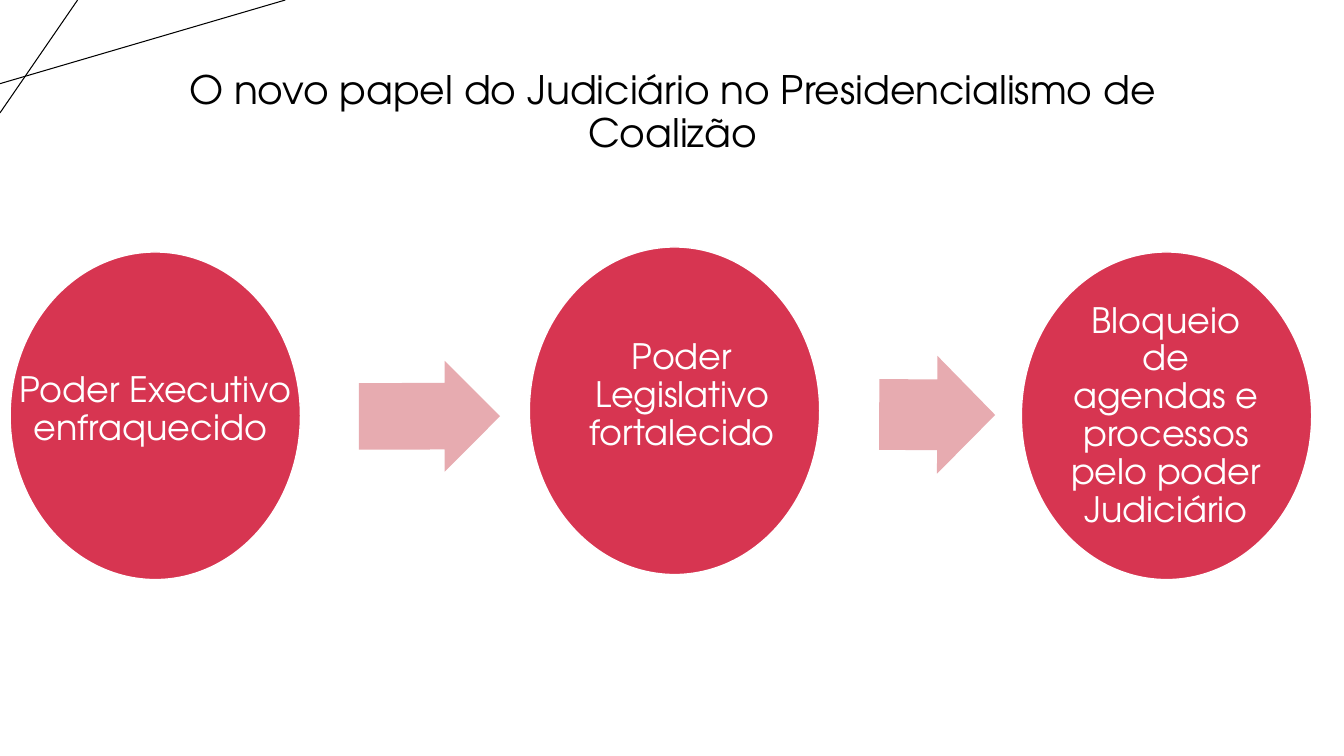
"""Build a slide on the Judiciary's new role: three powers joined by arrows."""
from dataclasses import dataclass

from lxml import etree
from pptx import Presentation
from pptx.dml.color import RGBColor
from pptx.enum.shapes import MSO_CONNECTOR, MSO_SHAPE
from pptx.enum.text import MSO_ANCHOR, MSO_AUTO_SIZE, PP_ALIGN
from pptx.oxml.ns import qn
from pptx.util import Pt

OVAL, ARROW = MSO_SHAPE.OVAL, MSO_SHAPE.RIGHT_ARROW
LINE = MSO_CONNECTOR.STRAIGHT
MID, CENTER, FIXED = MSO_ANCHOR.MIDDLE, PP_ALIGN.CENTER, MSO_AUTO_SIZE.NONE
SCALE = 9144
PAGE = (1333, 750)

TITLE = "O novo papel do Judiciário no Presidencialismo de Coalizão"
TITLE_BOX = (92, 40, 1150, 145)
OVAL_SIZE = (288, 325)
POWERS = [
    ("Poder Executivo enfraquecido ", (10, 250), (10, 296, 288, 222)),
    ("Poder Legislativo fortalecido", (525, 245), (575, 278, 203, 230)),
    ("Bloqueio de agendas e processos pelo poder Judiciário",
     (1013, 250), (1055, 298, 203, 230)),
]
ARROWS = [((356, 358, 140, 110), -0.1), ((872, 353, 115, 117), 0.2)]
RAYS = [(0, 83, 283, 0), (77, 0, 0, 112)]


@dataclass(frozen=True)
class Theme:
    font: str = "TeX Gyre Adventor"
    ink: RGBColor = RGBColor(0x00, 0x00, 0x00)
    paper: RGBColor = RGBColor(0xFF, 0xFF, 0xFF)
    rose: RGBColor = RGBColor(0xD7, 0x35, 0x51)
    blush: RGBColor = RGBColor(0xE7, 0xAB, 0xB0)
    head: int = 28
    body: int = 25


THEME = Theme()


def emu(box):
    return [n * SCALE for n in box]


def write(frame, text, size, color, pads):
    frame.word_wrap = True
    frame.auto_size = FIXED
    frame.vertical_anchor = MID
    frame.margin_left = frame.margin_right = pads[0] * SCALE
    frame.margin_top = frame.margin_bottom = pads[1] * SCALE
    para = frame.paragraphs[0]
    para.alignment = CENTER
    para.line_spacing = 0.9
    para.space_before = Pt(0)
    run = para.add_run()
    run.text = text
    run.font.name = THEME.font
    run.font.size = Pt(size)
    run.font.color.rgb = color


def add_form(slide, kind, box, fill):
    form = slide.shapes.add_shape(kind, *emu(box))
    form.shadow.inherit = False
    form.fill.solid()
    form.fill.fore_color.rgb = fill
    return form


def add_ray(slide, ends):
    ray = slide.shapes.add_connector(LINE, *emu(ends))
    ray.line.color.rgb = THEME.ink
    ray.line.width = Pt(0.75)
    etree.SubElement(ray.element.spPr, qn("a:effectLst"))


def add_power(slide, text, spot, box):
    oval = add_form(slide, OVAL, spot + OVAL_SIZE, THEME.rose)
    oval.line.color.rgb = THEME.paper
    oval.line.width = Pt(1)
    label = slide.shapes.add_textbox(*emu(box))
    write(label.text_frame, text, THEME.body, THEME.paper, (3, 3))


def add_arrow(slide, box, turn):
    arrow = add_form(slide, ARROW, box, THEME.blush)
    arrow.line.fill.background()
    arrow.adjustments[0] = 0.6
    arrow.adjustments[1] = 0.5
    arrow.rotation = turn


def main():
    deck = Presentation()
    deck.slide_width, deck.slide_height = emu(PAGE)
    slide = deck.slides.add_slide(deck.slide_layouts[5])
    slide.background.fill.solid()
    slide.background.fill.fore_color.rgb = THEME.paper
    title = slide.shapes.title
    title.left, title.top, title.width, title.height = emu(TITLE_BOX)
    write(title.text_frame, TITLE, THEME.head, THEME.ink, (10, 5))
    for ends in RAYS:
        add_ray(slide, ends)
    for power in POWERS:
        add_power(slide, *power)
    for arrow in ARROWS:
        add_arrow(slide, *arrow)
    deck.save("out.pptx")


if __name__ == "__main__":
    main()
